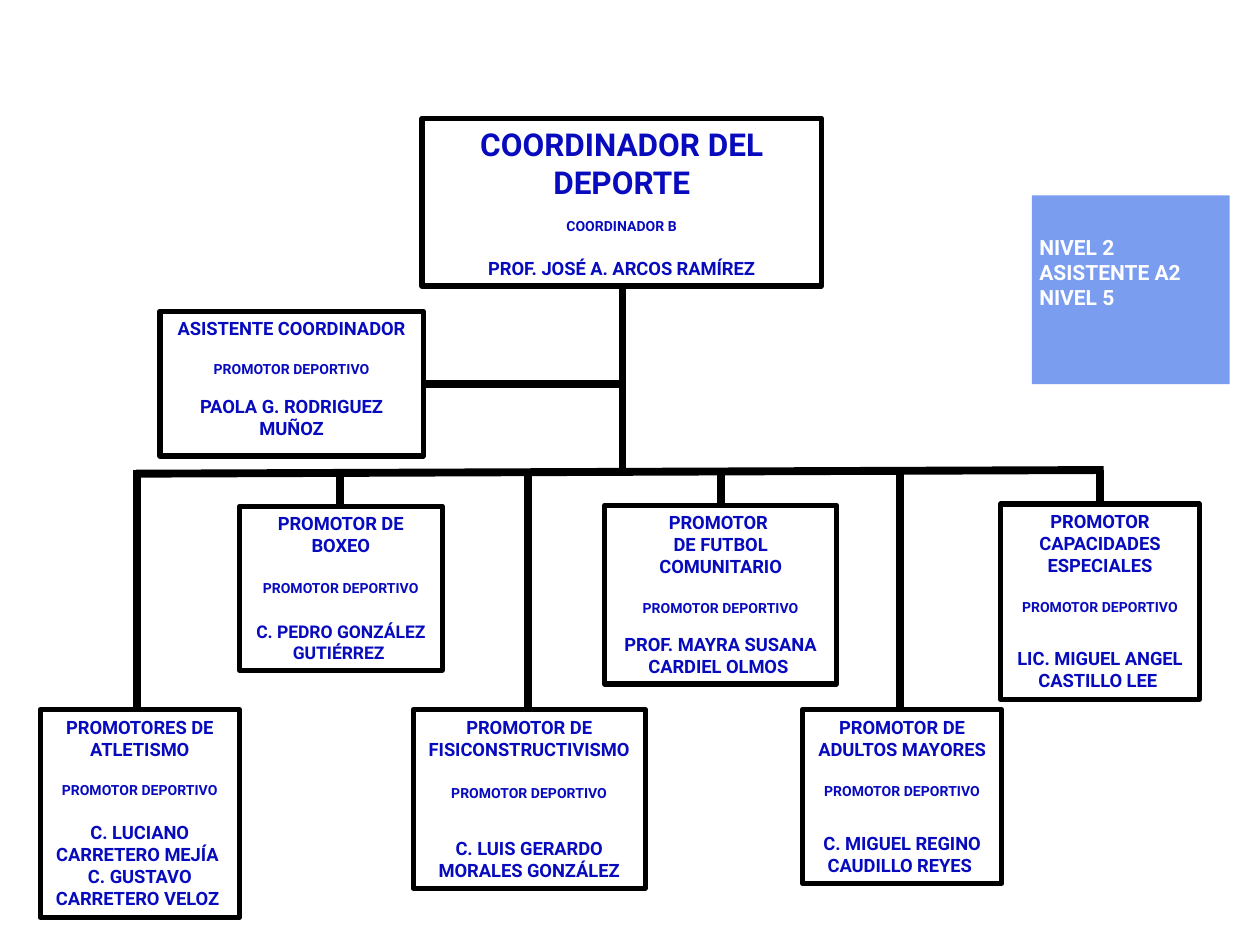
from lxml import etree
from pptx import Presentation
from pptx.dml.color import RGBColor
from pptx.enum import shapes, text
from pptx.oxml import ns
from pptx.util import Pt

FONT, BLUE, BLACK, WHITE, PANEL = "Roboto", "070BBD", "000000", "FFFFFF", "7A9DF0"
PROMOTER = "PROMOTOR DEPORTIVO"
BAR_Y = 268.6

# box, titles, gap above rank, gap above names, names, name size, drop x
PROMOTERS = [
    ((23, 405.4, 113.8, 118.8), ["PROMOTORES DE ATLETISMO"], 12.6, 13.1,
     ["C. LUCIANO CARRETERO MEJÍA ", "C. GUSTAVO CARRETERO VELOZ "], 10.5, 78.5),
    ((136.8, 289.4, 115.9, 93.6), ["PROMOTOR DE BOXEO"], 13.1, 14,
     ["C. PEDRO GONZÁLEZ GUTIÉRREZ "], 10, 194.4),
    ((236.2, 405.4, 132.5, 102.2), ["PROMOTOR DE FISICONSTRUCTIVISMO"], 14.3, 20.6,
     ["C. LUIS GERARDO MORALES GONZÁLEZ"], 10.5, 301.7),
    ((345.6, 288.7, 132.5, 102.2), ["PROMOTOR ", "DE FUTBOL COMUNITARIO"], 12.6, 9.7,
     ["PROF. MAYRA SUSANA CARDIEL OLMOS "], 10.5, 411.8),
    ((458.6, 405.4, 113.8, 99.4), ["PROMOTOR DE ADULTOS MAYORES"], 13.1, 18.9,
     ["C. MIGUEL REGINO CAUDILLO REYES "], 10.5, 514.1),
    ((571.7, 288, 113.8, 111.6), ["PROMOTOR CAPACIDADES ESPECIALES"], 12.6, 18.3,
     ["LIC. MIGUEL ANGEL CASTILLO LEE "], 10.5, 628.6),
]


def color(value):
    """Turn a hex string into a colour."""
    return RGBColor.from_string(value)


def write(frame, lines, ink, align):
    """Fill a text frame with (wording, size, space before) lines."""
    frame.word_wrap = True
    for index, (wording, size, gap) in enumerate(lines):
        line = frame.add_paragraph() if index else frame.paragraphs[0]
        line.text = wording
        line.alignment = align
        line.space_before = Pt(gap) if gap else None
        line.font.name, line.font.size, line.font.bold = FONT, Pt(size), True
        line.font.color.rgb = color(ink)


def rectangle(slide, box, fill):
    """Place a flat rectangle without an outline."""
    rect = slide.shapes.add_shape(shapes.MSO_SHAPE.RECTANGLE, *map(Pt, box))
    rect.shadow.inherit = False
    rect.fill.solid()
    rect.fill.fore_color.rgb = color(fill)
    rect.line.fill.background()
    return rect


def post(slide, box, titles, rank, names, rank_gap, name_gap,
         title_size=10.5, name_size=10.5, anchor=text.MSO_ANCHOR.TOP):
    """Place one post of the chart: titles, rank and holders."""
    card = rectangle(slide, box, WHITE)
    card.line.color.rgb = color(BLACK)
    card.line.width = Pt(3)
    lines = [(title, title_size, 0) for title in titles]
    lines.append((rank, 8, rank_gap))
    lines += [(name, name_size, 0 if i else name_gap) for i, name in enumerate(names)]
    write(card.text_frame, lines, BLUE, text.PP_ALIGN.CENTER)
    card.text_frame.vertical_anchor = anchor


def link(slide, *ends):
    """Draw a thick black line between two points."""
    line = slide.shapes.add_connector(shapes.MSO_CONNECTOR.STRAIGHT, *map(Pt, ends))
    line.line.color.rgb = color(BLACK)
    line.line.width = Pt(4.5)
    etree.SubElement(line._element.spPr, ns.qn("a:effectLst"))


def level_panel(slide, box):
    """Place the blue panel with the levels."""
    left, top, width, _ = box
    rectangle(slide, box, PANEL)
    levels = slide.shapes.add_textbox(Pt(left - 2.9), Pt(top + 18.7), Pt(width - 13.7), Pt(67))
    write(levels.text_frame, [(level, 12, 0) for level in ("NIVEL 2", "ASISTENTE A2", "NIVEL 5")],
          WHITE, text.PP_ALIGN.LEFT)


def leadership(slide, head, assistant):
    """Place the coordinator and the assistant with their links."""
    trunk, branch = 355.7, 219.6
    link(slide, trunk, head[1] + head[3], trunk, BAR_Y + 0.7)
    link(slide, assistant[0] + assistant[2], branch, trunk, branch)
    post(slide, head, ["COORDINADOR DEL DEPORTE"], "COORDINADOR B",
         ["PROF. JOSÉ A. ARCOS RAMÍREZ"], 9.9, 13.1, title_size=18,
         anchor=text.MSO_ANCHOR.MIDDLE)
    post(slide, assistant, ["ASISTENTE COORDINADOR"], PROMOTER,
         ["PAOLA G. RODRIGUEZ MUÑOZ"], 12, 10.3)


def promoters(slide):
    """Place the bar and the promoters hanging from it."""
    link(slide, 77.8, BAR_Y + 2.1, 630.7, BAR_Y)
    for box, titles, rank_gap, name_gap, names, size, drop in PROMOTERS:
        link(slide, drop, BAR_Y, drop, box[1])
        post(slide, box, titles, PROMOTER, names, rank_gap, name_gap, name_size=size)


def main():
    """Build the organisation chart."""
    deck = Presentation()
    deck.slide_width, deck.slide_height = Pt(720), Pt(540)
    slide = deck.slides.add_slide(deck.slide_layouts[6])
    level_panel(slide, (589.7, 111.6, 113, 108))
    leadership(slide, (241.2, 67.7, 228.2, 95.8), (91.4, 177.8, 150.5, 82.8))
    promoters(slide)
    deck.save("out.pptx")


if __name__ == "__main__":
    main()
